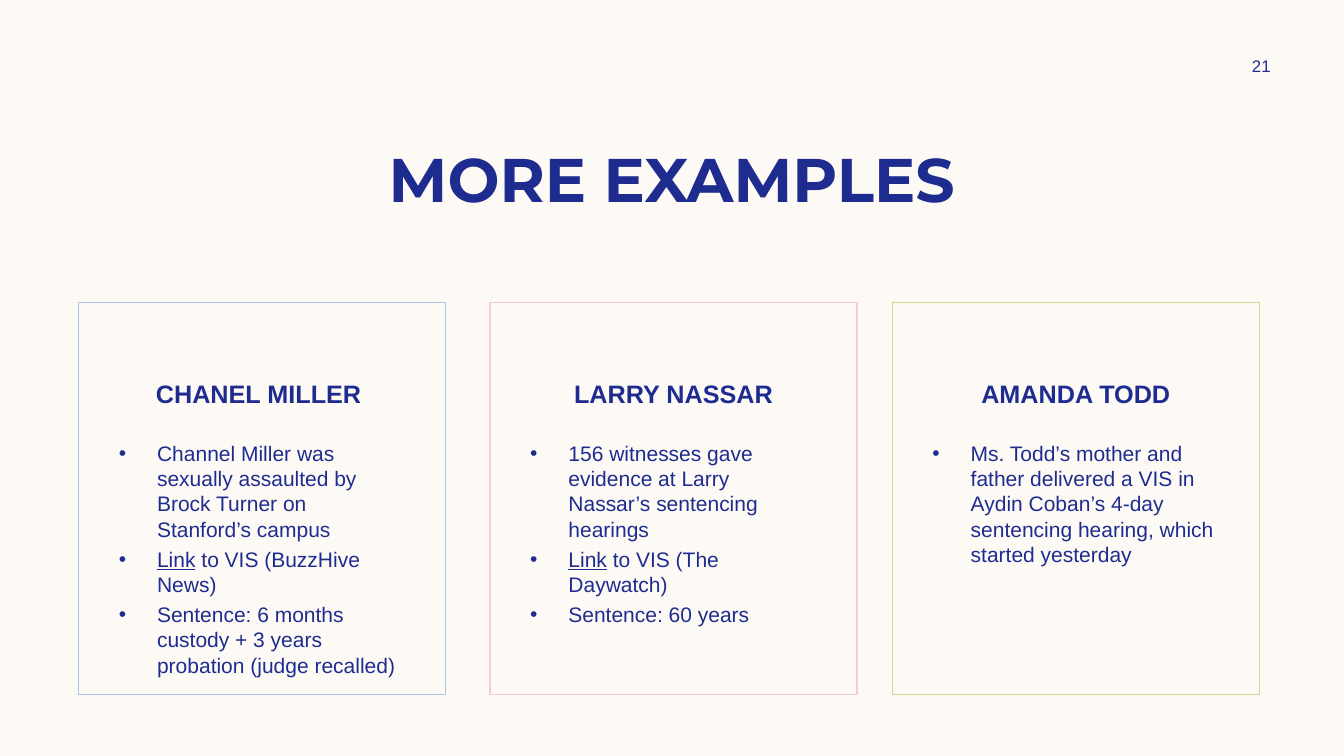
from dataclasses import dataclass
from lxml import etree
from pptx import Presentation
from pptx.dml.color import RGBColor
from pptx.enum.shapes import MSO_SHAPE
from pptx.enum.text import MSO_ANCHOR, MSO_AUTO_SIZE, PP_ALIGN
from pptx.oxml.ns import qn
from pptx.util import Inches, Pt

RECT = MSO_SHAPE.RECTANGLE
TOP, MIDDLE = MSO_ANCHOR.TOP, MSO_ANCHOR.MIDDLE
CENTER = PP_ALIGN.CENTER
FIXED = MSO_AUTO_SIZE.NONE


@dataclass(frozen=True)
class Theme:
    paper: str = "FDFAF6"
    ink: str = "1F2C8F"
    blue: str = "AAC3E8"
    pink: str = "F5CDCE"
    green: str = "D2D592"
    display: str = "Montserrat"
    body: str = "Arial"
    title: int = 44
    head: int = 18
    text: int = 15
    page: int = 12


theme = Theme()


def add_run(para, text, size, font=theme.body, bold=False, under=False):
    run = para.add_run()
    run.text = text
    run.font.name = font
    run.font.size = Pt(size)
    run.font.bold = bold
    run.font.underline = under
    run.font.color.rgb = RGBColor.from_string(theme.ink)


def add_bullet(para):
    para.space_before = Pt(3.6)
    props = para._p.get_or_add_pPr()
    props.set("marL", str(Inches(0.38)))
    props.set("indent", str(-Inches(0.38)))
    font = etree.SubElement(props, qn("a:buFont"))
    font.set("typeface", theme.body)
    mark = etree.SubElement(props, qn("a:buChar"))
    mark.set("char", "•")


deck = Presentation()
deck.slide_width, deck.slide_height = Inches(13.33), Inches(7.5)
slide = deck.slides.add_slide(deck.slide_layouts[5])
slide.background.fill.solid()
slide.background.fill.fore_color.rgb = RGBColor.from_string(theme.paper)

title = slide.shapes.title
title.left, title.top = Inches(0.83), Inches(1.35)
title.width, title.height = Inches(11.67), Inches(0.84)
title.text_frame.auto_size = FIXED
title.text_frame.vertical_anchor = TOP
para = title.text_frame.paragraphs[0]
para.alignment = CENTER
add_run(para, "MORE EXAMPLES", theme.title, theme.display, bold=True)

page = slide.shapes.add_textbox(Inches(11.97), Inches(0.5), Inches(1.08), Inches(0.3))
page.text_frame.word_wrap = True
page.text_frame.vertical_anchor = MIDDLE
para = page.text_frame.paragraphs[0]
para.alignment = CENTER
add_run(para, "21", theme.page)

cards = [
    (0.78, theme.blue, "CHANEL MILLER ", [
        [("Channel Miller was sexually assaulted by Brock Turner on Stanford’s campus", False)],
        [("Link", True), (" to VIS (BuzzHive News)", False)],
        [("Sentence: 6 months custody + 3 years probation (judge recalled)", False)],
    ]),
    (4.86, theme.pink, "LARRY NASSAR", [
        [("156 witnesses gave evidence at Larry Nassar’s sentencing hearings", False)],
        [("Link", True), (" to VIS (The Daywatch)", False)],
        [("Sentence: 60 years", False)],
    ]),
    (8.85, theme.green, "AMANDA TODD", [
        [("Ms. Todd’s mother and father delivered a VIS in Aydin Coban’s 4-day "
          "sentencing hearing, which started yesterday", False)],
    ]),
]

for left, color, name, points in cards:
    card = slide.shapes.add_shape(RECT, Inches(left), Inches(3), Inches(3.64), Inches(3.89))
    card.shadow.inherit = False
    card.fill.background()
    card.line.color.rgb = RGBColor.from_string(color)
    card.line.width = Pt(1)
    frame = card.text_frame
    frame.word_wrap = True
    frame.vertical_anchor = TOP
    frame.margin_top = Inches(0.75)
    para = frame.paragraphs[0]
    para.alignment = CENTER
    add_run(para, name, theme.head, bold=True)

    notes = slide.shapes.add_textbox(Inches(left + 0.3), Inches(4.32), Inches(3.03), Inches(2.41))
    frame = notes.text_frame
    frame.word_wrap = True
    for row, point in enumerate(points):
        para = frame.add_paragraph() if row else frame.paragraphs[0]
        add_bullet(para)
        for text, under in point:
            add_run(para, text, theme.text, under=under)

deck.save("out.pptx")
